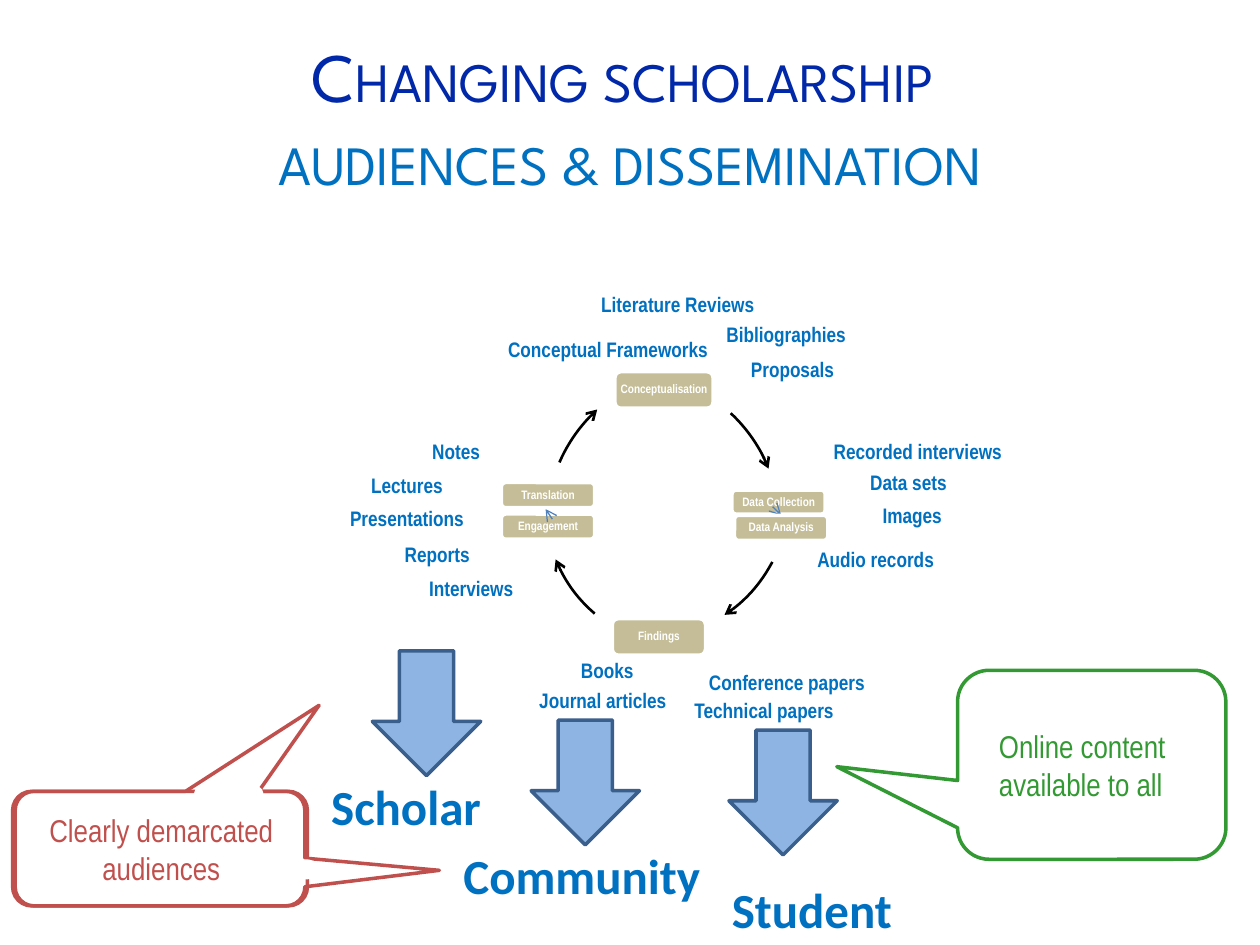
from pptx import Presentation
from pptx.dml.color import RGBColor
from pptx.enum.shapes import MSO_SHAPE
from pptx.enum.text import MSO_ANCHOR, PP_ALIGN
from pptx.oxml.ns import qn
from pptx.util import Emu, Pt
from lxml import etree

SCALE = 9144
ROUND = MSO_SHAPE.ROUNDED_RECTANGLE
ARROW = MSO_SHAPE.RIGHT_ARROW
OVAL = MSO_SHAPE.OVAL
BUBBLE = MSO_SHAPE.ROUNDED_RECTANGULAR_CALLOUT
MIDDLE, TOP = MSO_ANCHOR.MIDDLE, MSO_ANCHOR.TOP
CENTER, LEFT = PP_ALIGN.CENTER, PP_ALIGN.LEFT
NARROW = "Arial Narrow"
COLORS = {
    "navy": "0028A8", "blue": "0070C0", "white": "FFFFFF", "tan": "C4BD97",
    "black": "000000", "steel": "4F81BD", "sky": "8EB4E3", "edge": "3A5F8C",
    "red": "C0504D", "green": "339933",
}
NODES = [
    ("Conceptualisation", 488, 295, 78, 29),
    ("Data Collection", 581, 389, 74, 19),
    ("Data Analysis", 583, 409, 74, 20),
    ("Findings", 486, 491, 74, 29),
    ("Engagement", 398, 408, 74, 20),
    ("Translation", 398, 383, 74, 20),
]
CURVES = [
    ("black", 1.5, (580, 328), (593, 340), (604, 356), (610, 372)),
    ("steel", 0.75, (619, 408), (619, 408), (620, 409), (620, 409)),
    ("black", 1.5, (613, 446), (604, 463), (591, 478), (575, 488)),
    ("black", 1.5, (472, 487), (458, 475), (448, 461), (441, 444)),
    ("steel", 0.75, (435, 407), (434, 406), (434, 405), (433, 404)),
    ("black", 1.5, (444, 367), (451, 351), (461, 337), (474, 325)),
]
LABELS = [
    ("Conceptual Frameworks ", 382, 265, 205),
    ("Literature Reviews", 466, 229, 144),
    ("Bibliographies", 565, 253, 118),
    ("Proposals", 570, 281, 118),
    ("Data sets", 662, 371, 118),
    ("Conference papers", 547, 529, 155),
    ("Audio records", 636, 432, 118),
    ("Images", 665, 397, 118),
    ("Recorded interviews", 642, 346, 173),
    ("Books", 423, 520, 118),
    ("Reports", 288, 428, 118),
    ("Journal articles", 410, 544, 137),
    ("Technical papers", 528, 552, 157),
    ("Notes", 303, 346, 118),
    ("Presentations", 264, 399, 118),
    ("Lectures", 264, 373, 118),
    ("Interviews", 315, 455, 118),
]
ARROWS = [(572, 586), (289, 523), (415, 578)]
GROUPS = [
    ("Student", 571, 693, 156),
    ("Community", 358, 666, 221),
    ("Scholar", 253, 611, 156),
]


def px(num):
    """Turn px into EMU."""
    return Emu(round(num * SCALE))


def tint(name):
    """Look up a colour by name."""
    return RGBColor.from_string(COLORS[name])


def write(shape, text, size, color, font=NARROW, bold=False,
          align=CENTER, anchor=MIDDLE, wrap=True):
    """Fill a shape with evenly styled text."""
    frame = shape.text_frame
    frame.text = text
    frame.word_wrap = wrap
    frame.vertical_anchor = anchor
    for para in frame.paragraphs:
        para.alignment = align
        for run in para.runs:
            run.font.name = font
            run.font.size = Pt(size)
            run.font.bold = bold
            run.font.color.rgb = tint(color)
    return frame


def draw(slide, kind, box, fill=None, line=None):
    """Add a flat preset shape."""
    shape = slide.shapes.add_shape(kind, *map(px, box))
    shape.shadow.inherit = False
    if fill:
        shape.fill.solid()
        shape.fill.fore_color.rgb = tint(fill)
    else:
        shape.fill.background()
    if line:
        shape.line.color.rgb = tint(line)
        shape.line.width = Pt(2)
    else:
        shape.line.fill.background()
    return shape


def add_text(slide, box, text, size, color, **style):
    """Add a text box."""
    shape = slide.shapes.add_textbox(*map(px, box))
    return write(shape, text, size, color, **style)


def add_title(slide):
    """Add the two-tone title in small capitals."""
    text = "Changing scholarship \vaudiences & dissemination"
    frame = add_text(slide, (50, 30, 900, 125), text, 39.6, "navy",
                     font="League Spartan")
    runs = frame.paragraphs[0].runs
    for run in runs:
        run.font._element.set("cap", "small")
    runs[-1].font.color.rgb = tint("blue")


def add_node(slide, text, *box):
    """Add a stage of the cycle."""
    shape = draw(slide, ROUND, box, "tan", "white")
    frame = write(shape, text, 7, "white", bold=True)
    frame.margin_left = frame.margin_right = px(3)
    frame.margin_top = frame.margin_bottom = px(3)
    frame.paragraphs[0].line_spacing = 0.9


def add_curve(slide, color, width, *ends, steps=12):
    """Add a Bezier curve with an open arrowhead."""
    points = []
    for step in range(steps + 1):
        t = step / steps
        parts = ((1 - t) ** 3, 3 * t * (1 - t) ** 2, 3 * t * t * (1 - t), t ** 3)
        points.append(tuple(px(sum(w * end[axis] for w, end in zip(parts, ends)))
                            for axis in (0, 1)))
    path = slide.shapes.build_freeform(*points[0])
    path.add_line_segments(points[1:], close=False)
    shape = path.convert_to_shape()
    shape.shadow.inherit = False
    shape.fill.background()
    shape.line.color.rgb = tint(color)
    shape.line.width = Pt(width)
    etree.SubElement(shape.line._get_or_add_ln(), qn("a:tailEnd"), type="arrow")


def add_label(slide, text, left, top, width):
    """Add an output beside the cycle."""
    shape = draw(slide, ROUND, (left, top, width, 24))
    write(shape, text, 12, "blue", bold=True)


def add_bubble(slide, box, color, dx, dy):
    """Add an outlined callout with its tip at the given offset."""
    shape = draw(slide, BUBBLE, box, line=color)
    shape.adjustments[0] = dx
    shape.adjustments[1] = dy
    return shape


def add_notes(slide):
    """Add the two remarks on audiences."""
    draw(slide, OVAL, (145, 628, 64, 12), "white")
    shape = add_bubble(slide, (12, 628, 232, 91), "red", 0.54, -1.25)
    write(shape, "Clearly demarcated audiences", 18, "red")
    add_bubble(slide, (10, 628, 232, 91), "red", 0.96, 0.19)
    draw(slide, OVAL, (154, 619, 55, 21), "white")
    draw(slide, OVAL, (233, 682, 20, 16), "white")
    add_bubble(slide, (760, 532, 213, 150), "green", -0.95, 0.01)
    add_text(slide, (783, 572, 160, 71), "Online content\navailable to all",
             18, "green", align=LEFT, anchor=TOP, wrap=False)


def main():
    """Build the slide and save it."""
    deck = Presentation()
    deck.slide_width, deck.slide_height = px(1000), px(750)
    slide = deck.slides.add_slide(deck.slide_layouts[6])
    add_title(slide)
    for node, curve in zip(NODES, CURVES):
        add_node(slide, *node)
        add_curve(slide, *curve)
    for label in LABELS:
        add_label(slide, *label)
    for left, top in ARROWS:
        draw(slide, ARROW, (left, top, 99, 86), "sky", "edge").rotation = 90
    for name, left, top, width in GROUPS:
        add_text(slide, (left, top, width, 57), name, 28, "blue",
                 font="Calibri", bold=True, align=LEFT, anchor=TOP)
    add_notes(slide)
    deck.save("out.pptx")


if __name__ == "__main__":
    main()
